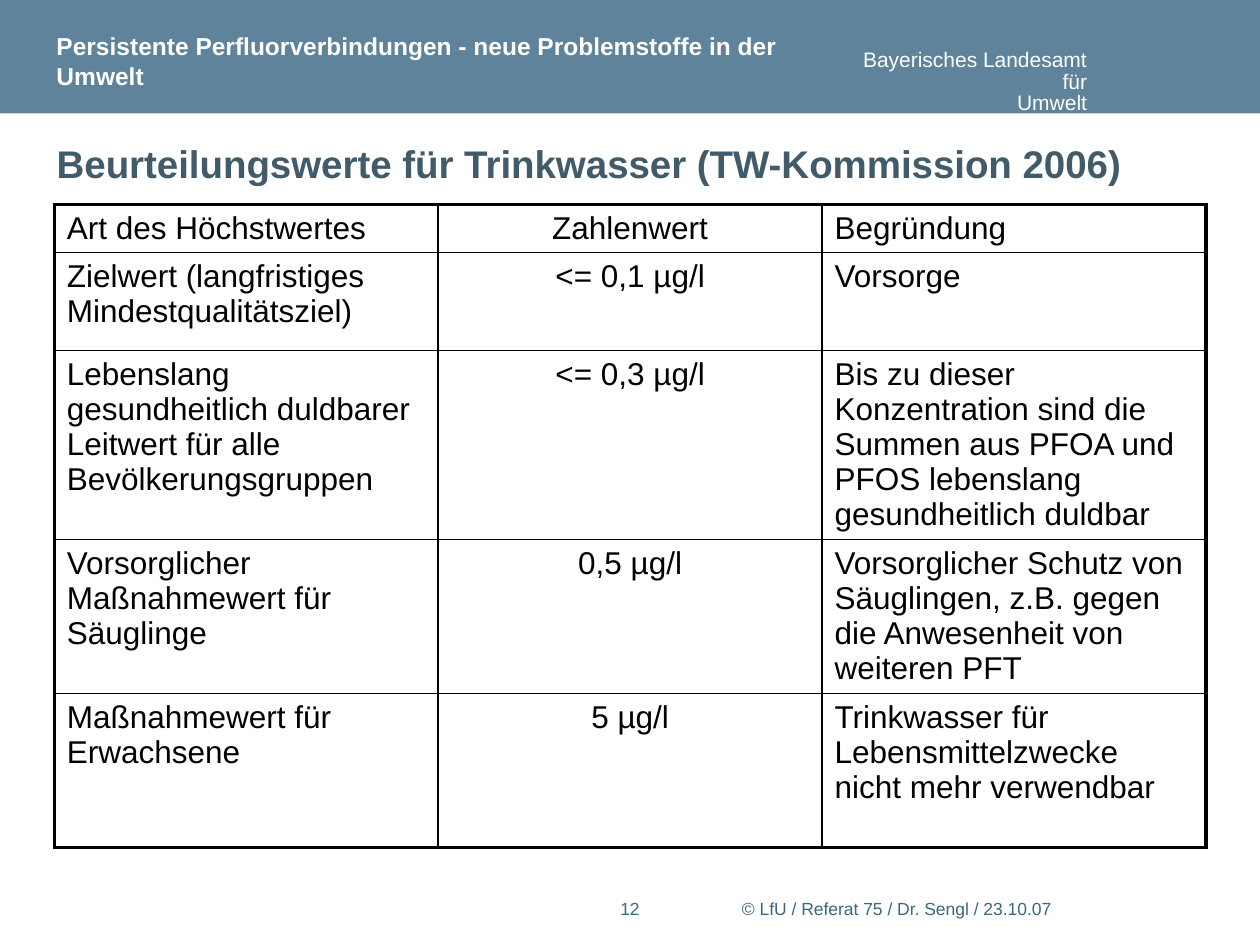
from pptx import Presentation
from pptx.dml.color import RGBColor
from pptx.enum.shapes import MSO_SHAPE
from pptx.enum.text import MSO_ANCHOR, PP_ALIGN
from pptx.oxml.ns import qn
from pptx.util import Pt
from lxml.etree import SubElement

COLORS = {
    "band": "5E839A",
    "white": "FFFFFF",
    "title": "415B6B",
    "foot": "3B687F",
    "black": "000000",
}
HEAD = "Persistente Perfluorverbindungen - neue Problemstoffe in der Umwelt"
TITLE = "Beurteilungswerte für Trinkwasser (TW-Kommission 2006)"
OFFICE = ["Bayerisches Landesamt für", "Umwelt"]
FOOT = "© LfU / Referat 75 / Dr. Sengl / 23.10.07"
ROWS = [
    ("Art des Höchstwertes", "Zahlenwert", "Begründung"),
    ("Zielwert (langfristiges Mindestqualitätsziel)", "<= 0,1 µg/l", "Vorsorge"),
    ("Lebenslang gesundheitlich duldbarer Leitwert für alle Bevölkerungsgruppen",
     "<= 0,3 µg/l",
     "Bis zu dieser Konzentration sind die Summen aus PFOA und PFOS "
     "lebenslang gesundheitlich duldbar"),
    ("Vorsorglicher Maßnahmewert für Säuglinge", "0,5 µg/l",
     "Vorsorglicher Schutz von Säuglingen, z.B. gegen die Anwesenheit "
     "von weiteren PFT"),
    ("Maßnahmewert für Erwachsene", "5 µg/l",
     "Trinkwasser für Lebensmittelzwecke nicht mehr verwendbar"),
]
HEIGHTS = [27.4, 56, 108, 88, 88]
WIDTH = 219.4


def color(name):
    return RGBColor.from_string(COLORS[name])


def apply(item, values):
    for name, value in values.items():
        setattr(item, name, value)


def write(frame, lines, size, tone, bold=False, **para):
    frame.text = "\n".join(lines)
    for line in frame.paragraphs:
        apply(line, para)
        for run in line.runs:
            apply(run.font, {"name": "Arial", "size": Pt(size), "bold": bold})
            run.font.color.rgb = color(tone)


def place(shape, left, top, width, height):
    apply(shape, {"left": Pt(left), "top": Pt(top),
                  "width": Pt(width), "height": Pt(height)})


def add_band(slide):
    band = slide.shapes.add_shape(MSO_SHAPE.RECTANGLE, 0, 0, Pt(720), Pt(64.8))
    band.shadow.inherit = False
    band.fill.solid()
    band.fill.fore_color.rgb = color("band")
    band.line.fill.background()


def add_text(slide, box, lines, size, tone, frame=None, **style):
    shape = slide.shapes.add_textbox(*map(Pt, box))
    apply(shape.text_frame, {"word_wrap": True, **(frame or {})})
    write(shape.text_frame, lines, size, tone, **style)


def set_title(slide):
    title = slide.shapes.title
    place(title, 25.2, 73.4, 674.6, 39.6)
    apply(title.text_frame, {"word_wrap": True,
                             "vertical_anchor": MSO_ANCHOR.MIDDLE})
    write(title.text_frame, [TITLE], 22, "title", True, alignment=PP_ALIGN.LEFT)


def add_edge(cell, side, width):
    line = SubElement(cell._tc.get_or_add_tcPr(), qn("a:" + side),
                      w=str(Pt(width)))
    fill = SubElement(line, qn("a:solidFill"))
    SubElement(fill, qn("a:srgbClr"), val=COLORS["black"])


def add_grid(slide):
    count, last = len(ROWS[0]), len(ROWS) - 1
    frame = slide.shapes.add_table(len(ROWS), count, Pt(31), Pt(116.8),
                                   Pt(WIDTH * count), Pt(sum(HEIGHTS)))
    table = frame.table
    apply(table, {"first_row": False, "horz_banding": False})
    for col in table.columns:
        col.width = Pt(WIDTH)
    for r, texts in enumerate(ROWS):
        table.rows[r].height = Pt(HEIGHTS[r])
        for c, text in enumerate(texts):
            cell = table.cell(r, c)
            align = PP_ALIGN.CENTER if c == 1 else PP_ALIGN.LEFT
            write(cell.text_frame, [text], 18, "black", alignment=align,
                  line_spacing=Pt(20.1))
            outer = {"lnL": c == 0, "lnR": c == count - 1,
                     "lnT": r == 0, "lnB": r == last}
            for side, thick in outer.items():
                add_edge(cell, side, 2.25 if thick else 1)
            cell.fill.background()


def main():
    deck = Presentation()
    apply(deck, {"slide_width": Pt(720), "slide_height": Pt(540)})
    slide = deck.slides.add_slide(deck.slide_layouts[5])
    add_band(slide)
    flat = dict.fromkeys(["margin_left", "margin_top",
                          "margin_right", "margin_bottom"], 0)
    add_text(slide, (483, 29, 138.2, 24.5), OFFICE, 12, "white", flat,
             alignment=PP_ALIGN.RIGHT, line_spacing=Pt(12.2))
    add_text(slide, (416.9, 509.8, 289.4, 22.3), [FOOT], 10, "foot")
    add_text(slide, (344.9, 509.8, 30.2, 22.3), ["12"], 10, "foot",
             alignment=PP_ALIGN.CENTER)
    add_text(slide, (25.2, 17.6, 436.3, 37.4), [HEAD], 14, "white",
             {"vertical_anchor": MSO_ANCHOR.BOTTOM}, bold=True,
             line_spacing=Pt(17.1))
    set_title(slide)
    add_grid(slide)
    deck.save("out.pptx")


if __name__ == "__main__":
    main()
